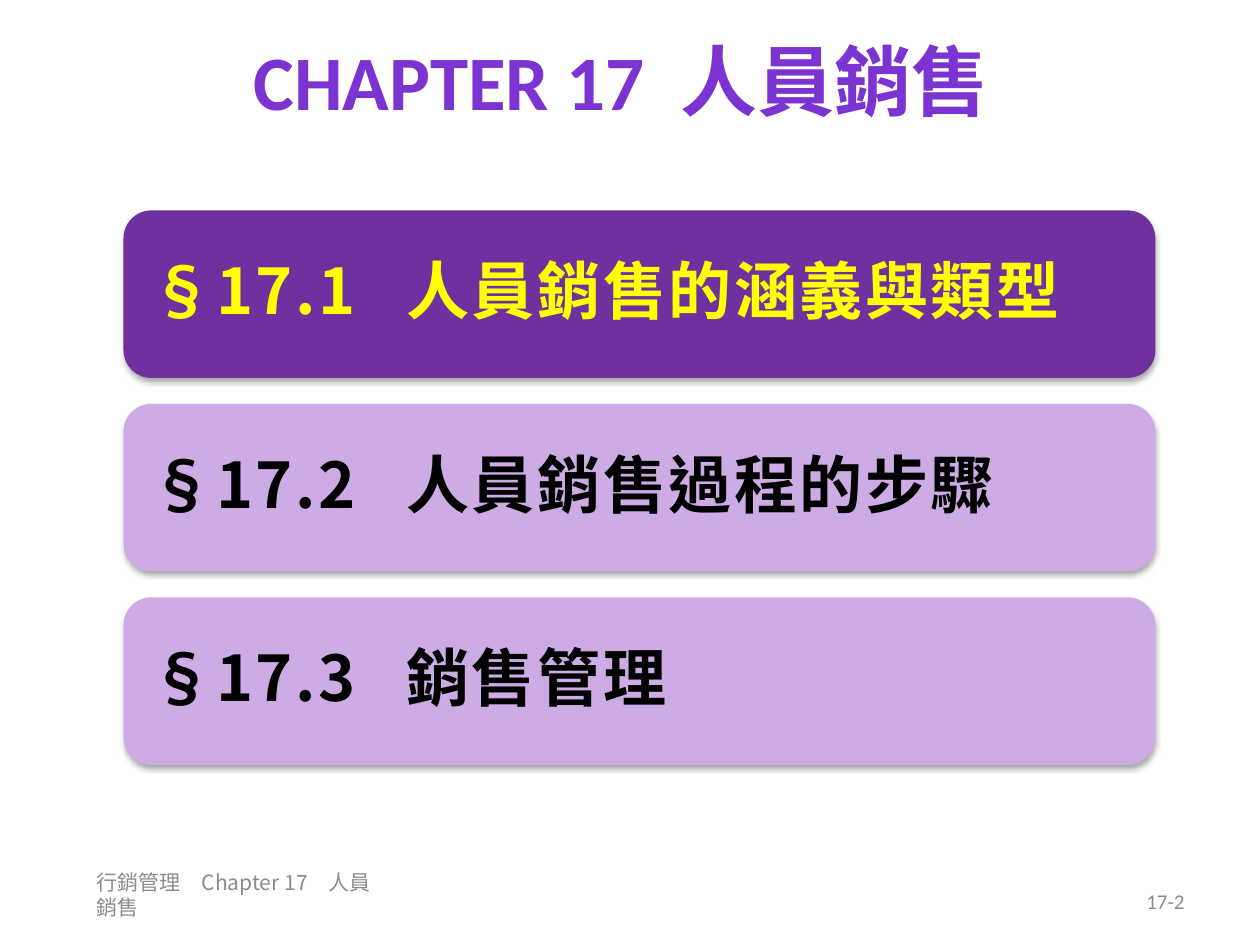
from lxml import etree
from pptx import Presentation, util as u
from pptx.dml.color import RGBColor
from pptx.enum import shapes, text
from pptx.oxml import parse_xml
from pptx.oxml.ns import nsdecls, qn

COLORS = {"title": "7B34D2", "current": "7030A0", "other": "CDACE6",
          "current_text": "FFFF00", "other_text": "000000", "footer": "8C8C8C"}
CJK = "Noto Sans CJK SC"

prs = Presentation()
prs.slide_width, prs.slide_height = u.Inches(10), u.Inches(7.5)
slide = prs.slides.add_slide(prs.slide_layouts[6])


def grid(left, top, width, height):
    """Convert hundredths of the slide's width and height to lengths."""
    col, row = prs.slide_width / 100, prs.slide_height / 100
    return int(left * col), int(top * row), int(width * col), int(height * row)


def add_run(paragraph, words, color, spacing=0, **font_values):
    run = paragraph.add_run()
    run.text = words
    run.font.color.rgb = RGBColor.from_string(COLORS[color])
    for key, value in font_values.items():
        setattr(run.font, key, value)
    props = run._r.get_or_add_rPr()
    props.set("lang", "zh-TW")
    if spacing:
        props.set("spc", str(int(spacing * 100)))
    etree.SubElement(props, qn("a:ea")).set("typeface", CJK)


# Title, footer and page number
title_font = {"size": u.Pt(44), "bold": True, "name": "Calibri"}
align = text.PP_ALIGN
lines = [
    (grid(4.3, 0.53, 90, 15.87), align.CENTER, "title", title_font,
     [("CHAPTER 17", 0), (" ", 10), ("人員銷售", 0)]),
    (grid(6.7, 92, 24.4, 5.33), align.LEFT, "footer",
     {"size": u.Pt(12), "name": CJK}, [("行銷管理　Chapter 17　人員銷售", 0)]),
    (grid(71.7, 92.67, 23.3, 5.33), align.RIGHT, "footer",
     {"size": u.Pt(12), "name": "Calibri"}, [("17-2", 0)]),
]
for place, alignment, color, font_values, parts in lines:
    frame = slide.shapes.add_textbox(*place).text_frame
    frame.word_wrap = True
    frame.vertical_anchor = text.MSO_ANCHOR.MIDDLE
    frame.paragraphs[0].alignment = alignment
    for words, spacing in parts:
        add_run(frame.paragraphs[0], words, color, spacing, **font_values)

# Section bars, the current one highlighted
sections = ["人員銷售的涵義與類型", "人員銷售過程的步驟", "銷售管理"]
for i, heading in enumerate(sections):
    state = "current" if i == 0 else "other"
    bar = slide.shapes.add_shape(shapes.MSO_SHAPE.ROUNDED_RECTANGLE,
                                 *grid(9.8, 22.27 + 20.47 * i, 81.9, 17.73))
    bar.fill.solid()
    bar.fill.fore_color.rgb = RGBColor.from_string(COLORS[state])
    bar.line.fill.background()
    bar._element.spPr.append(parse_xml(
        f'<a:effectLst {nsdecls("a")}><a:outerShdw blurRad="{u.Pt(3.1)}" '
        f'dist="{u.Pt(1.8)}" dir="5400000" rotWithShape="0"><a:srgbClr val="000000">'
        '<a:alpha val="35000"/></a:srgbClr></a:outerShdw></a:effectLst>'))

    frame = bar.text_frame
    frame.word_wrap = True
    frame.vertical_anchor = text.MSO_ANCHOR.MIDDLE
    for side in ("left", "top", "right", "bottom"):
        setattr(frame, f"margin_{side}", u.Inches(0.15))
    label = frame.paragraphs[0]
    label.alignment = align.LEFT
    label.line_spacing = 0.9
    tabs = etree.SubElement(label._p.get_or_add_pPr(), qn("a:tabLst"))
    etree.SubElement(tabs, qn("a:tab"), pos=str(u.Inches(2.03)), algn="l")
    for words, name in ((f"§17.{i + 1}\t", CJK), (heading, "Calibri")):
        add_run(label, words, f"{state}_text", 1.5,
                size=u.Pt(36), bold=True, name=name)

prs.save("out.pptx")
